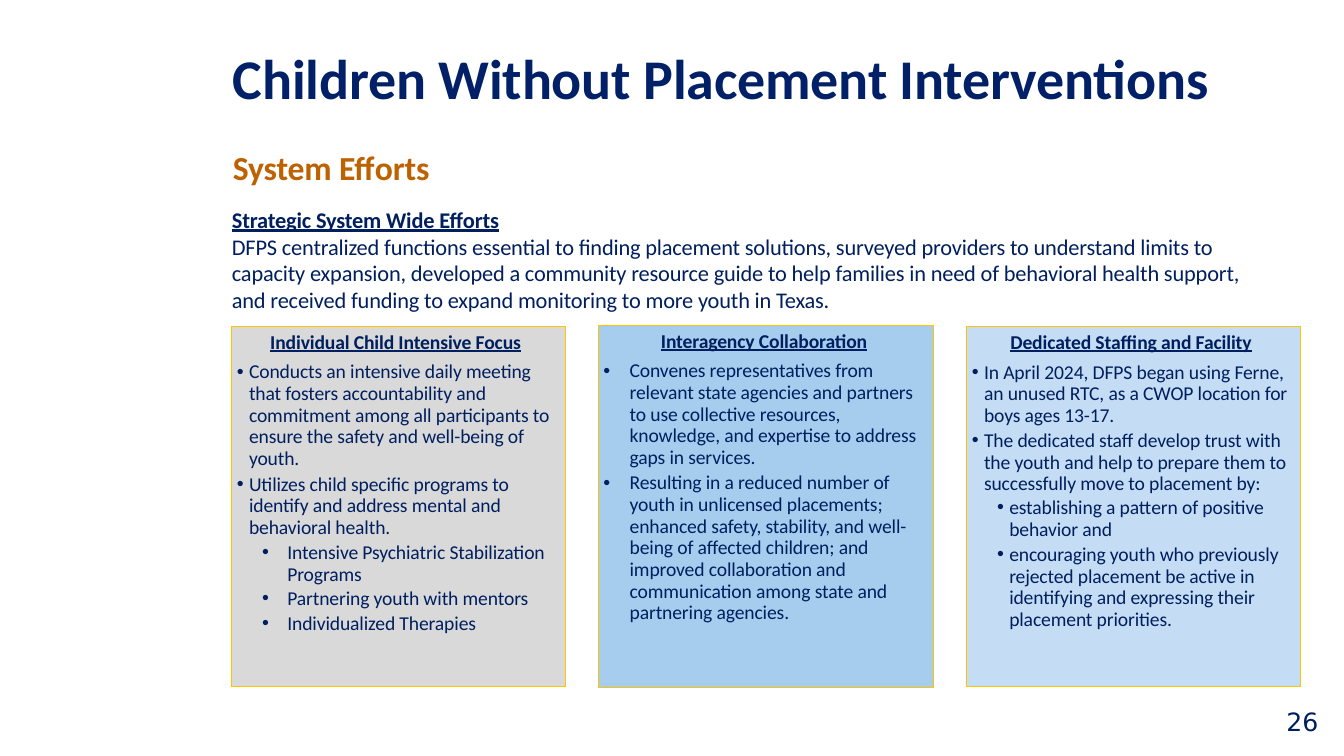
from lxml import etree
from pptx import Presentation
from pptx import util as u
from pptx.dml.color import RGBColor
from pptx.enum import shapes, text
from pptx.oxml import ns

NAVY, TITLE, RUST, GOLD = "001F5F", "012067", "BE6100", "FFC500"


def color(code):
    return RGBColor.from_string(code)


def write(par, words, size=14, font="Calibri", ink=NAVY, bold=False, line=False,
          left=0, hang=0, before=0, lead=None, level=0, bullet=False):
    """Fill one paragraph; \\v in the words is a line break."""
    par.text = words
    par.level = level
    par.alignment = text.PP_ALIGN.LEFT
    props = par._p.get_or_add_pPr()
    props.set("marL", str(u.Inches(left)))
    props.set("indent", str(-u.Inches(hang)))
    if bullet:
        etree.SubElement(props, ns.qn("a:buFont")).set("typeface", "Arial")
        etree.SubElement(props, ns.qn("a:buChar")).set("char", "•")
    par.space_before = u.Pt(before)
    par.space_after = u.Pt(0)
    par.line_spacing = lead or 1.0
    for run in par.runs:
        face = run.font
        face.name, face.size = font, u.Pt(size)
        face.bold, face.underline = bold, line
        face.color.rgb = color(ink)
        run._r.get_or_add_rPr().set("spc", "-10")


class Page:
    def __init__(self, deck):
        self.slide = deck.slides.add_slide(deck.slide_layouts[5])

    def fill(self, shape, pars, top):
        frame = shape.text_frame
        frame.word_wrap = True
        frame.auto_size = text.MSO_AUTO_SIZE.NONE
        frame.vertical_anchor = text.MSO_ANCHOR.TOP
        frame.margin_left = frame.margin_right = frame.margin_bottom = 0
        frame.margin_top = u.Inches(top)
        for i, (words, style) in enumerate(pars):
            par = frame.add_paragraph() if i else frame.paragraphs[0]
            write(par, words, **style)

    def title(self, words, box, **style):
        shape = self.slide.shapes.title
        shape.left, shape.top, shape.width, shape.height = map(u.Inches, box)
        self.fill(shape, [(words, style)], 0.01)

    def label(self, box, *pars):
        shape = self.slide.shapes.add_textbox(*map(u.Inches, box))
        self.fill(shape, pars, 0.01)

    def card(self, box, tint, pars):
        shape = self.slide.shapes.add_shape(
            shapes.MSO_SHAPE.RECTANGLE, *map(u.Inches, box))
        shape.shadow.inherit = False
        shape.fill.solid()
        shape.fill.fore_color.rgb = color(tint)
        shape.line.color.rgb = color(GOLD)
        shape.line.width = u.Pt(0.5)
        self.fill(shape, pars, 0.03)


def head(words, left):
    return words, dict(bold=True, line=True, left=left, before=1.9)


def item(words, left=0.18, hang=0.12, before=2.5, lead=u.Pt(15.4), level=0):
    return words, dict(left=left, hang=hang, before=before, lead=lead,
                       level=level, bullet=True)


def sub(words, left, hang, before, lead=None):
    return item(words, left, hang, before, lead, 1)


# Cards: top, height, tint, paragraphs
CARDS = [
    (3.24, 3.57, "D9D9D9", [
        head("Individual Child Intensive Focus", 0.39),
        item("Conducts an intensive daily meeting that fosters accountability and "
             "commitment among all participants to ensure the safety and "
             "well-being of youth.", before=6, lead=0.92),
        item("Utilizes child specific programs to identify and address mental and "
             "behavioral health.", before=2.8),
        sub("Intensive Psychiatric Stabilization Programs", 0.56, 0.25, 2.5, u.Pt(15.4)),
        sub("Partnering youth with mentors", 0.56, 0.25, 0.8),
        sub("Individualized Therapies", 0.56, 0.25, 1.1),
    ]),
    (3.23, 3.59, "A7CDEE", [
        head("Interagency Collaboration", 0.62),
        item("Convenes representatives from relevant state agencies and partners "
             "to use collective resources,\vknowledge, and expertise to address "
             "gaps in services.", 0.31, 0.26, 6, 0.92),
        item("Resulting in a reduced number of youth in unlicensed placements; "
             "enhanced safety, stability, and well-being of affected children; and "
             "improved collaboration and communication among state and "
             "partnering agencies.", 0.31, 0.26, 2.5, 0.92),
    ]),
    (3.24, 3.57, "C5DDF4", [
        head("Dedicated Staffing and Facility", 0.44),
        item("In April 2024, DFPS began using Ferne, an unused RTC, as a CWOP "
             "location for boys ages 13-17.", before=6.2),
        item("The dedicated staff develop trust with the youth and help to prepare "
             "them to successfully move to placement by:"),
        sub("establishing a pattern of positive behavior and",
            0.43, 0.12, 0.8, u.Pt(16.1)),
        sub("encouraging youth who previously rejected placement be active in "
            "identifying and expressing their placement priorities.",
            0.43, 0.12, 2.5, 0.92),
    ]),
]


def main():
    deck = Presentation()
    deck.slide_width, deck.slide_height = u.Inches(13.33), u.Inches(7.5)
    page = Page(deck)

    # Title and introduction
    page.title("Children Without Placement Interventions", (2.3, 0.42, 9.79, 0.69),
               size=40, ink=TITLE, bold=True, left=0.01, before=0)
    page.label(
        (2.29, 1.45, 10.21, 1.68),
        ("System Efforts", dict(size=24, ink=RUST, bold=True, left=0.02)),
        ("Strategic System Wide Efforts",
         dict(size=16, bold=True, line=True, left=0.01, before=13.1)),
        ("DFPS centralized functions essential to finding placement solutions, "
         "surveyed providers to understand limits to capacity expansion, developed "
         "a community resource guide to help families in need of behavioral health "
         "support, and received funding to expand monitoring to more youth in Texas.",
         dict(size=16, left=0.01)))

    # Three cards at an equal step
    for i, (top, high, tint, pars) in enumerate(CARDS):
        page.card((2.29 + i * 3.645, top, 3.32, high), tint, pars)

    # Page number
    page.label((12.75, 7, 0.34, 0.33),
               ("26", dict(size=18, font="DejaVu Sans", left=0.01)))
    deck.save("out.pptx")


if __name__ == "__main__":
    main()
